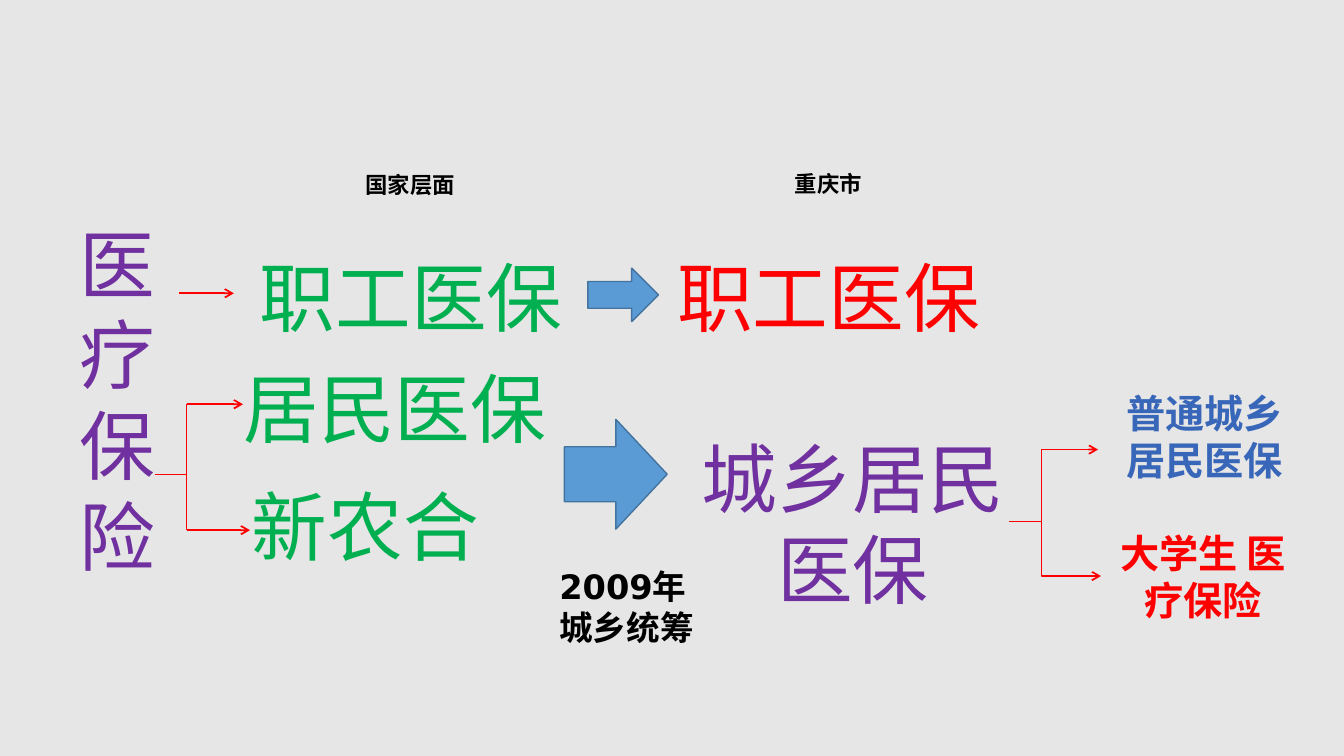
import pptx
import pptx.util
import pptx.dml.color
import pptx.enum.shapes
import pptx.enum.text
import pptx.oxml.ns
from lxml import etree

RGB = pptx.dml.color.RGBColor
GREY = RGB(0xE6, 0xE6, 0xE6)
BLACK = RGB(0, 0, 0)
RED = RGB(0xFF, 0, 0)
GREEN = RGB(0, 0xB0, 0x50)
PURPLE = RGB(0x70, 0x30, 0xA0)
BLUE = RGB(0x38, 0x66, 0xB8)
ARROW_FILL = RGB(0x5B, 0x9B, 0xD5)
ARROW_EDGE = RGB(0x43, 0x73, 0x9E)
LEFT = pptx.enum.text.PP_ALIGN.LEFT
CENTER = pptx.enum.text.PP_ALIGN.CENTER

deck = pptx.Presentation()
deck.slide_width = pptx.util.Inches(13.33)
deck.slide_height = pptx.util.Inches(7.5)
COL = deck.slide_width / 100
ROW = deck.slide_height / 100
slide = deck.slides.add_slide(deck.slide_layouts[6])
slide.background.fill.solid()
slide.background.fill.fore_color.rgb = GREY


def add_label(text, at, size=54, color=BLACK, bold=False, align=LEFT, font="DejaVu Sans"):
    col, row, cols, rows = at
    label = slide.shapes.add_textbox(int(col * COL), int(row * ROW), int(cols * COL), int(rows * ROW))
    frame = label.text_frame
    frame.word_wrap = True
    frame.auto_size = pptx.enum.text.MSO_AUTO_SIZE.SHAPE_TO_FIT_TEXT
    paragraph = frame.paragraphs[0]
    paragraph.alignment = align
    run = paragraph.add_run()
    run.text = text
    run.font.name = font
    run.font.size = pptx.util.Pt(size)
    run.font.bold = bold
    run.font.color.rgb = color
    return label


def add_line(start, end, arrow=False):
    line = slide.shapes.add_connector(
        pptx.enum.shapes.MSO_CONNECTOR.STRAIGHT,
        int(start[0] * COL), int(start[1] * ROW), int(end[0] * COL), int(end[1] * ROW))
    line.line.color.rgb = RED
    line.line.width = pptx.util.Pt(1.25 if arrow else 0.5)
    if arrow:
        etree.SubElement(line.line._get_or_add_ln(), pptx.oxml.ns.qn("a:tailEnd"), type="arrow")
    etree.SubElement(line._element.spPr, pptx.oxml.ns.qn("a:effectLst"))
    return line


add_label("国家层面", (23.48, 22, 14.1, 4.93), size=16, bold=True, align=CENTER)
add_label("重庆市", (56.34, 21.87, 10.58, 4.93), size=16, bold=True, align=CENTER)

add_label("医疗保险", (4.35, 28.13, 8.7, 49.87), color=PURPLE, align=CENTER)
add_label("职工医保", (18.6, 32.53, 25.2, 13.47), color=GREEN)
add_label("居民医保", (17.4, 47.2, 25.2, 13.47), color=GREEN)
add_label("新农合", (18, 62.8, 19.95, 13.47), color=GREEN)

add_label("职工医保", (49.66, 32.53, 25.2, 13.47), color=RED)
add_label("城乡居民医保", (50.86, 56.53, 25.2, 25.6), color=PURPLE, align=CENTER)
add_label("2009年 城乡统筹", (40.88, 74.27, 11.7, 12), size=24, bold=True)

add_label("普通城乡居民医保", (82, 50.8, 15.23, 13.73),
          size=28, color=BLUE, bold=True, align=CENTER, font="Calibri")
students = add_label("大学生 医疗保险", (81.92, 69.33, 15.23, 13.73),
                     size=28, color=RED, bold=True, align=CENTER, font="Noto Sans CJK SC")

for col, row, cols, rows in ((43.74, 35.47, 5.25, 7.07), (42, 55.47, 7.65, 14.53)):
    transition = slide.shapes.add_shape(
        pptx.enum.shapes.MSO_SHAPE.RIGHT_ARROW,
        int(col * COL), int(row * ROW), int(cols * COL), int(rows * ROW))
    transition.shadow.inherit = False
    transition.fill.solid()
    transition.fill.fore_color.rgb = ARROW_FILL
    transition.line.color.rgb = ARROW_EDGE
    transition.line.width = pptx.util.Pt(1)

add_line((13.35, 38.8), (17.4, 38.8), arrow=True)

for stem, spine, middle, top, bottom, top_tip, bottom_tip in (
        (11.55, 13.88, 62.8, 53.47, 70.13, 18.08, 18.6),
        (75.09, 77.49, 68.93, 59.47, 76.2, 81.7, 81.92)):
    add_line((stem, middle), (spine, middle))
    add_line((spine, top), (spine, bottom))
    add_line((spine, top), (top_tip, top), arrow=True)
    lower_branch = add_line((spine, bottom), (bottom_tip, bottom), arrow=True)
lower_branch.end_connect(students, 1)

deck.save("out.pptx")
